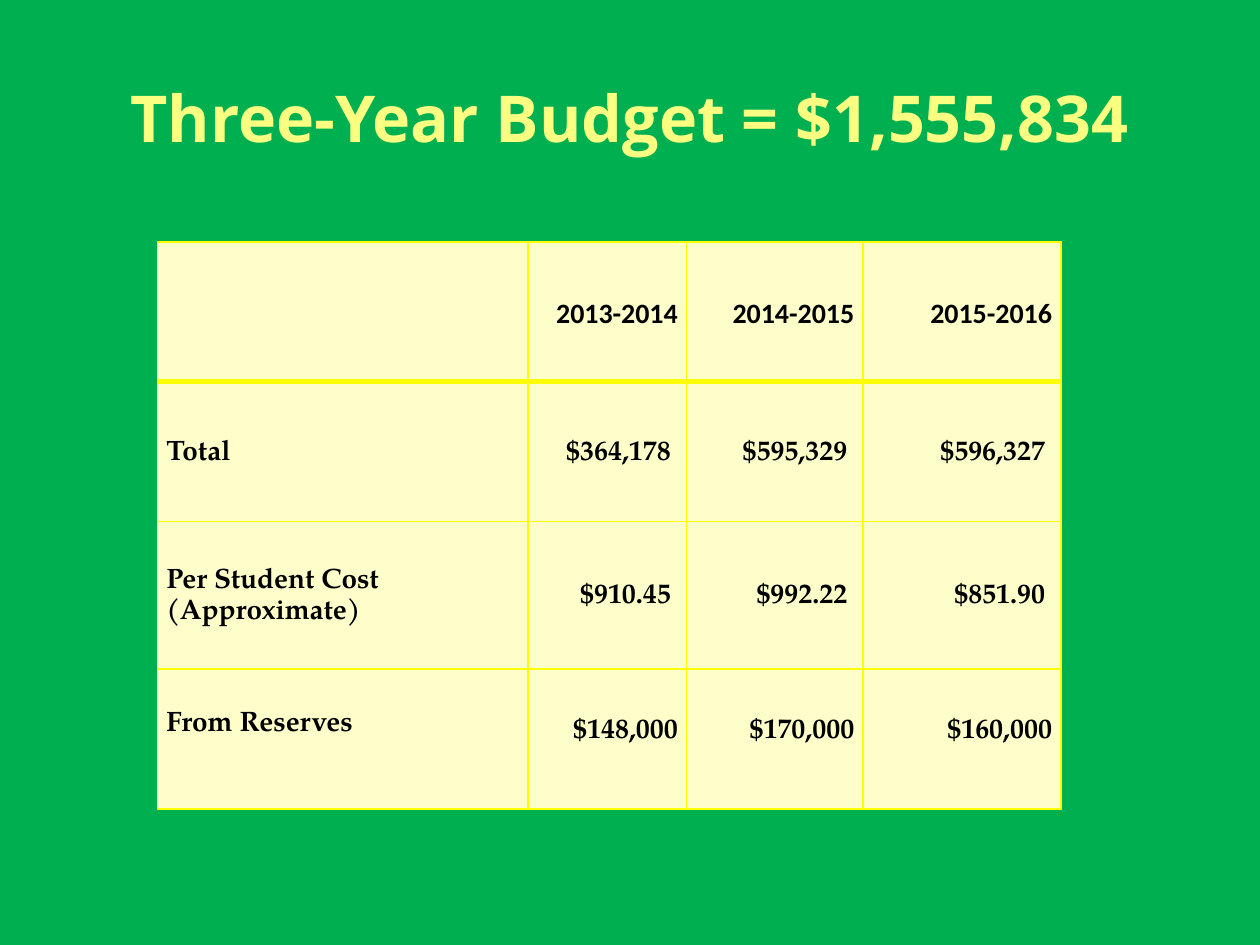
from dataclasses import dataclass

from lxml.etree import SubElement
from pptx import Presentation
from pptx.dml.color import RGBColor
from pptx.enum.text import MSO_ANCHOR, PP_ALIGN
from pptx.oxml.ns import qn
from pptx.util import Inches, Pt


@dataclass(frozen=True)
class Theme:
    background: str = "00B050"
    title: str = "FAFF81"
    cell: str = "FDFECA"
    border: str = "FFFF00"
    text: str = "000000"
    title_font: str = "Open Sans"
    header_font: str = "Calibri"
    body_font: str = "TeX Gyre Pagella"
    title_size: float = 36.9
    table_size: float = 16
    border_width: float = 1
    header_rule_width: float = 3


THEME = Theme()

BUDGET = [
    ["", "2013-2014", "2014-2015", "2015-2016"],
    ["Total", "$364,178 ", "$595,329 ", "$596,327 "],
    ["Per Student Cost (Approximate)", "$910.45 ", "$992.22 ", "$851.90 "],
    ["From Reserves", "$148,000", "$170,000", "$160,000"],
]
COLUMN_WIDTHS = [2.94, 1.26, 1.4, 1.57]
ROW_HEIGHTS = [1.11, 1.11, 1.17, 1.11]


def format_text(frame, font_name, size, color, alignment):
    for paragraph in frame.paragraphs:
        paragraph.alignment = alignment
        for run in paragraph.runs:
            run.font.name = font_name
            run.font.size = Pt(size)
            run.font.bold = True
            run.font.color.rgb = RGBColor.from_string(color)


def set_borders(cell, bottom_width):
    properties = cell._tc.get_or_add_tcPr()
    widths = dict.fromkeys(("a:lnL", "a:lnR", "a:lnT"), THEME.border_width)
    widths["a:lnB"] = bottom_width
    for position, (side, width) in enumerate(widths.items()):
        line = SubElement(properties, qn(side), w=str(Pt(width)))
        fill = SubElement(line, qn("a:solidFill"))
        SubElement(fill, qn("a:srgbClr"), val=THEME.border)
        properties.insert(position, line)


def place_title(slide, left, top, width, height):
    title = slide.shapes.title
    title.left, title.top = Inches(left), Inches(top)
    title.width, title.height = Inches(width), Inches(height)
    frame = title.text_frame
    frame.text = "Three-Year Budget = $1,555,834"
    frame.vertical_anchor = MSO_ANCHOR.MIDDLE
    format_text(frame, THEME.title_font, THEME.title_size, THEME.title, PP_ALIGN.CENTER)


def fill_cell(cell, text, row, column):
    is_header, is_last = row == 0, row == len(BUDGET) - 1
    cell.fill.solid()
    cell.fill.fore_color.rgb = RGBColor.from_string(THEME.cell)
    cell.margin_left = cell.margin_right = Inches(0.07)
    cell.margin_top = cell.margin_bottom = 0
    cell.vertical_anchor = MSO_ANCHOR.MIDDLE
    if is_last:
        cell.vertical_anchor = MSO_ANCHOR.BOTTOM
        cell.margin_bottom = Inches(0.5 if column else 0.56)
    cell.text_frame.text = text
    cell.text_frame.paragraphs[0].line_spacing = 1.15
    format_text(
        cell.text_frame,
        THEME.header_font if is_header else THEME.body_font,
        THEME.table_size,
        THEME.text,
        PP_ALIGN.RIGHT if column else PP_ALIGN.LEFT,
    )
    set_borders(cell, THEME.header_rule_width if is_header else THEME.border_width)


def place_budget(slide, left, top, width, height):
    budget = slide.shapes.add_table(
        len(ROW_HEIGHTS), len(COLUMN_WIDTHS),
        Inches(left), Inches(top), Inches(width), Inches(height),
    ).table
    for column, share in zip(budget.columns, COLUMN_WIDTHS):
        column.width = Inches(width * share / sum(COLUMN_WIDTHS))
    for row, share in zip(budget.rows, ROW_HEIGHTS):
        row.height = Inches(height * share / sum(ROW_HEIGHTS))
    for row, entries in enumerate(BUDGET):
        for column, text in enumerate(entries):
            fill_cell(budget.cell(row, column), text, row, column)


def main():
    deck = Presentation()
    deck.slide_width, deck.slide_height = Inches(10), Inches(7.5)
    slide = deck.slides.add_slide(deck.slide_layouts[5])
    slide.background.fill.solid()
    slide.background.fill.fore_color.rgb = RGBColor.from_string(THEME.background)
    place_title(slide, 0.5, 0.3, 9, 1.25)
    place_budget(slide, 1.25, 1.92, 7.17, 4.5)
    deck.save("out.pptx")


if __name__ == "__main__":
    main()
